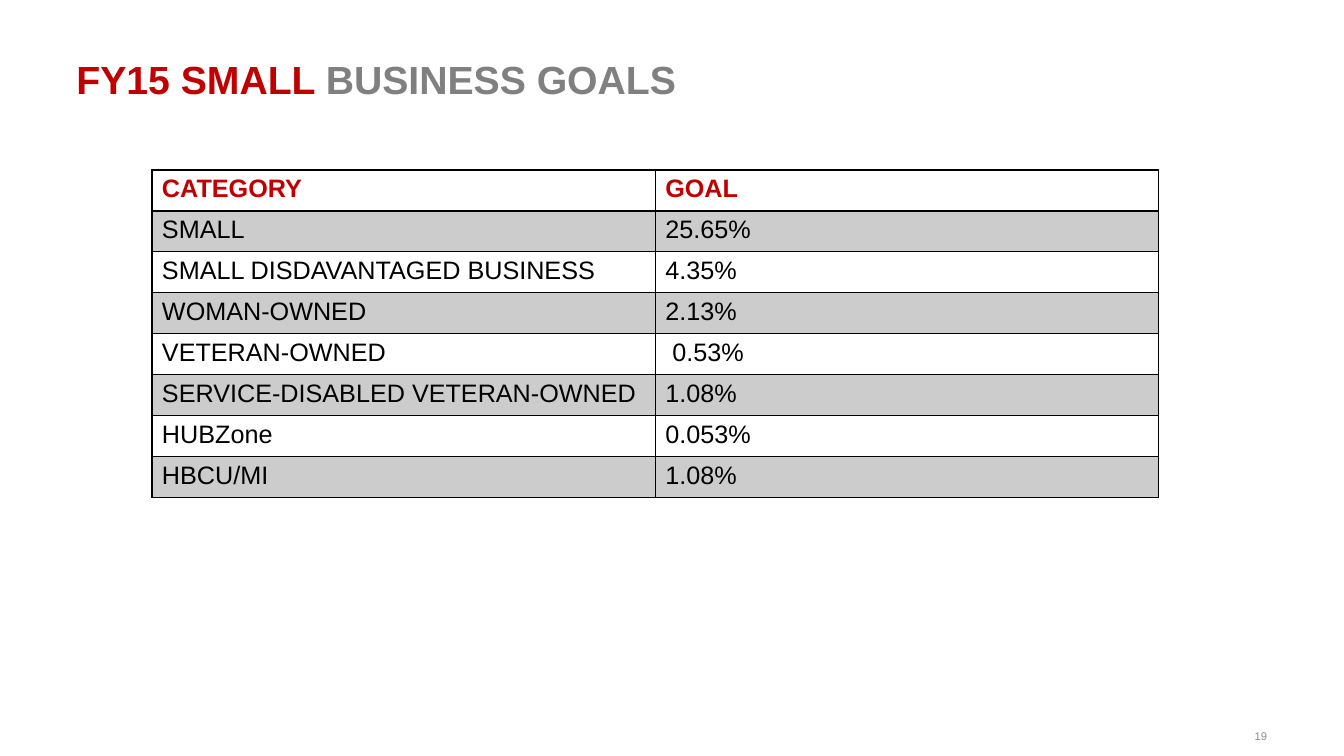
from typing import NamedTuple

from lxml import etree
from pptx import Presentation
from pptx.dml.color import RGBColor
from pptx.enum import text
from pptx.oxml import ns
from pptx.util import Pt

FONT = "Arial"
RED, GRAY, PALE_GRAY, BLACK, BAND = "C00000", "808080", "8C8C8C", "000000", "CCCCCC"


class Box(NamedTuple):
    left: float
    top: float
    width: float
    height: float


class Goal(NamedTuple):
    category: str
    share: str


HEADER = Goal("CATEGORY", "GOAL")
GOALS = [
    Goal("SMALL", "25.65%"),
    Goal("SMALL DISDAVANTAGED BUSINESS", "4.35%"),
    Goal("WOMAN-OWNED", "2.13%"),
    Goal("VETERAN-OWNED", " 0.53%"),
    Goal("SERVICE-DISABLED VETERAN-OWNED", "1.08%"),
    Goal("HUBZone", "0.053%"),
    Goal("HBCU/MI", "1.08%"),
]
TITLE_BOX = Box(47.5, 36, 864, 85.7)
TABLE_BOX = Box(108.5, 121.5, 719, 233.6)
PAGE_BOX = Box(779, 511.2, 133.2, 28.8)


def color(value: str) -> RGBColor:
    return RGBColor.from_string(value)


def set_font(font, size: float, value: str, bold: bool = False) -> None:
    font.name, font.size, font.bold = FONT, Pt(size), bold
    font.color.rgb = color(value)


def add_text_paragraph(slide, box: Box, anchor):
    """Add a wrapped text box and return its first paragraph."""
    frame = slide.shapes.add_textbox(*map(Pt, box)).text_frame
    frame.word_wrap = True
    frame.vertical_anchor = anchor
    return frame.paragraphs[0]


def add_title(slide) -> None:
    title = add_text_paragraph(slide, TITLE_BOX, text.MSO_ANCHOR.TOP)
    set_font(title.font, 28, RED, bold=True)
    for words, shade in (("FY15 SMALL ", RED), ("BUSINESS GOALS", GRAY)):
        part = title.add_run()
        part.text = words
        part.font.color.rgb = color(shade)


def add_page_number(slide) -> None:
    page = add_text_paragraph(slide, PAGE_BOX, text.MSO_ANCHOR.MIDDLE)
    page.text = "19"
    page.alignment = text.PP_ALIGN.RIGHT
    set_font(page.font, 8, PALE_GRAY)


def set_border(cell, side: str, width: float) -> None:
    edge = etree.SubElement(
        cell._tc.get_or_add_tcPr(), ns.qn(f"a:ln{side}"), w=str(Pt(width))
    )
    fill = etree.SubElement(edge, ns.qn("a:solidFill"))
    etree.SubElement(fill, ns.qn("a:srgbClr"), val=BLACK)


def add_goal_table(slide) -> None:
    rows = [HEADER, *GOALS]
    table = slide.shapes.add_table(
        len(rows), len(HEADER), *map(Pt, TABLE_BOX)
    ).table
    for row_index, goal in enumerate(rows):
        table.rows[row_index].height = Pt(TABLE_BOX.height / len(rows))
        is_header = row_index == 0
        for column_index, words in enumerate(goal):
            cell = table.cell(row_index, column_index)
            cell.text = words
            set_font(cell.text_frame.paragraphs[0].font, 18,
                     RED if is_header else BLACK, bold=is_header)
            for side in "LRTB":
                under_header = (row_index, side) in ((0, "B"), (1, "T"))
                set_border(cell, side, 2 if under_header else 1)
            if row_index % 2:
                cell.fill.solid()
                cell.fill.fore_color.rgb = color(BAND)
            else:
                cell.fill.background()


def main() -> None:
    deck = Presentation()
    deck.slide_width, deck.slide_height = Pt(960), Pt(540)
    slide = deck.slides.add_slide(deck.slide_layouts[6])
    add_page_number(slide)
    add_title(slide)
    add_goal_table(slide)
    deck.save("out.pptx")


if __name__ == "__main__":
    main()
